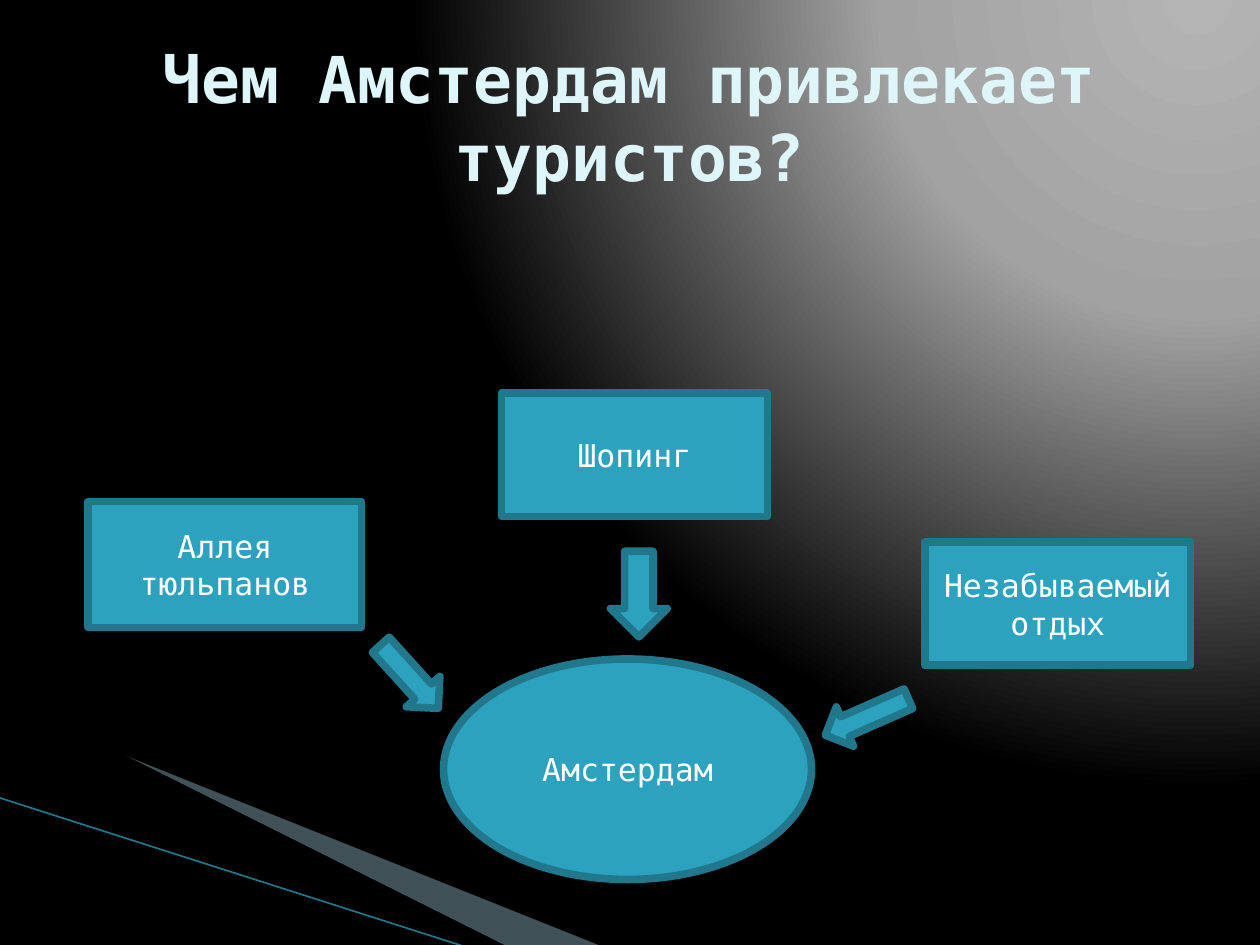
from dataclasses import dataclass

from lxml import etree
from pptx import Presentation
from pptx.dml.color import RGBColor
from pptx.enum import shapes as sh, text as tx
from pptx.oxml import parse_xml
from pptx.oxml.ns import nsdecls, qn
from pptx.util import Inches, Pt


@dataclass(frozen=True)
class Theme:
    font: str = "DejaVu Sans Mono"
    title: str = "DEF5FA"
    label: str = "FFFFFF"
    fill: str = "2DA2BF"
    outline: str = "21788D"
    wedge: str = "A0CBDC"
    shade: str = "000000"
    glow: tuple = ((0, "B4B4B4"), (40, "A2A2A2"), (100, "000000"))
    title_size: float = 36.9
    label_size: float = 18
    outline_width: float = 4.33
    hairline: float = 0.95


@dataclass(frozen=True)
class Node:
    label: str
    left: float
    top: float
    width: float
    height: float
    preset: sh.MSO_SHAPE = sh.MSO_SHAPE.FLOWCHART_PROCESS


@dataclass(frozen=True)
class Arrow:
    left: float
    top: float
    width: float
    height: float
    angle: float


THEME = Theme()
NODES = (
    Node("Амстердам", 3.52, 5.23, 2.92, 1.75, sh.MSO_SHAPE.FLOWCHART_CONNECTOR),
    Node("Аллея тюльпанов", 0.7, 3.98, 2.17, 1, sh.MSO_SHAPE.RECTANGLE),
    Node("Шопинг", 3.98, 3.12, 2.11, 0.98),
    Node("Незабываемый отдых", 7.34, 4.3, 2.11, 0.98),
)
ARROWS = (
    Arrow(2.91, 5.19, 0.68, 0.36, 47.9),
    Arrow(4.73, 4.49, 0.68, 0.45, 90),
    Arrow(6.52, 5.52, 0.72, 0.34, 156.3),
)


def rgb(code: str) -> RGBColor:
    return RGBColor.from_string(code)


def paint_background(slide) -> None:
    """Radial glow centred near the top right corner."""
    stops = "".join(
        f'<a:gs pos="{pos * 1000}"><a:srgbClr val="{code}"/></a:gs>'
        for pos, code in THEME.glow
    )
    background = parse_xml(
        f'<p:bg {nsdecls("p", "a")}><p:bgPr><a:gradFill rotWithShape="1">'
        f'<a:gsLst>{stops}</a:gsLst><a:path path="circle">'
        '<a:fillToRect l="95000" t="-106000" r="5000" b="206000"/></a:path>'
        "</a:gradFill><a:effectLst/></p:bgPr></p:bg>"
    )
    slide.element.cSld.insert(0, background)


def add_wedge(slide, points: list, color: str, opacity: int = 100) -> None:
    builder = slide.shapes.build_freeform(*points[0], scale=Inches(1))
    builder.add_line_segments(points[1:], close=True)
    wedge = builder.convert_to_shape()
    wedge.shadow.inherit = False
    wedge.fill.solid()
    wedge.fill.fore_color.rgb = rgb(color)
    wedge.line.fill.background()
    if opacity < 100:
        tint = wedge.fill._xPr.find(".//" + qn("a:srgbClr"))
        etree.SubElement(tint, qn("a:alpha")).set("val", str(opacity * 1000))


def add_hairline(slide) -> None:
    hairline = slide.shapes.add_connector(
        sh.MSO_CONNECTOR.STRAIGHT,
        Inches(-0.01), Inches(6.33), Inches(3.71), Inches(7.52),
    )
    hairline.line.color.rgb = rgb(THEME.outline)
    hairline.line.width = Pt(THEME.hairline)
    etree.SubElement(hairline._element.spPr, qn("a:effectLst"))


def write(shape, words: str, size: float, color: str, bold: bool = False) -> None:
    frame = shape.text_frame
    frame.word_wrap = True
    frame.vertical_anchor = tx.MSO_ANCHOR.MIDDLE
    paragraph = frame.paragraphs[0]
    paragraph.text = words
    paragraph.alignment = tx.PP_ALIGN.CENTER
    paragraph.font.name = THEME.font
    paragraph.font.size = Pt(size)
    paragraph.font.bold = bold
    paragraph.font.color.rgb = rgb(color)


def add_block(slide, preset: sh.MSO_SHAPE, item: Node | Arrow):
    """Add a preset shape in the common fill and outline."""
    block = slide.shapes.add_shape(
        preset, Inches(item.left), Inches(item.top),
        Inches(item.width), Inches(item.height),
    )
    block.shadow.inherit = False
    block.fill.solid()
    block.fill.fore_color.rgb = rgb(THEME.fill)
    block.line.color.rgb = rgb(THEME.outline)
    block.line.width = Pt(THEME.outline_width)
    return block


def main() -> None:
    deck = Presentation()
    deck.slide_width, deck.slide_height = Inches(10), Inches(7.5)
    slide = deck.slides.add_slide(deck.slide_layouts[6])

    paint_background(slide)
    add_wedge(slide, [(0.55, 6.5), (5.95, 7.51), (4.56, 7.51)], THEME.wedge, 40)
    add_wedge(slide, [(0.53, 6.49), (4.57, 7.51), (3.72, 7.52)], THEME.shade)
    add_hairline(slide)

    heading = slide.shapes.add_textbox(Inches(0.5), Inches(0.3), Inches(9), Inches(1.25))
    write(heading, "Чем Амстердам привлекает туристов?",
          THEME.title_size, THEME.title, bold=True)

    for node in NODES:
        block = add_block(slide, node.preset, node)
        write(block, node.label, THEME.label_size, THEME.label)
    for arrow in ARROWS:
        add_block(slide, sh.MSO_SHAPE.RIGHT_ARROW, arrow).rotation = arrow.angle

    deck.save("out.pptx")


if __name__ == "__main__":
    main()
